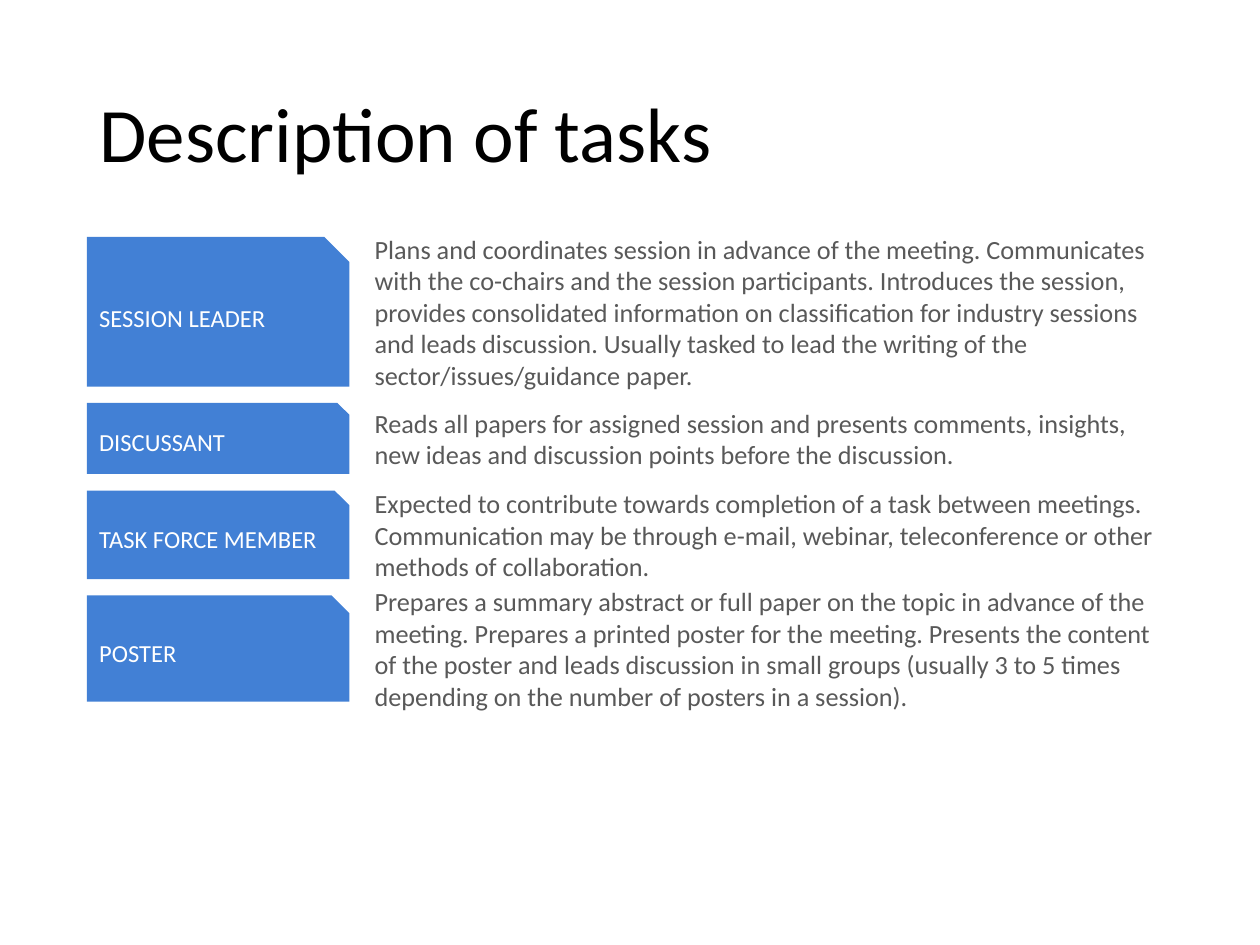
from dataclasses import dataclass

import pptx
import pptx.dml.color
import pptx.enum.shapes
import pptx.enum.text
import pptx.util

Pt = pptx.util.Pt
COLORS = {"title": "000000", "tag": "4280D5", "tag_text": "FFFFFF", "body": "595959"}
FONT = "Calibri"
LEFT, TOP, GAP = 49.6, 135.4, 9.4
TAG_WIDTH = 150
DETAIL_LEFT, DETAIL_WIDTH = 207, 465


@dataclass
class Task:
    role: str
    detail: str
    height: float


TASKS = [
    Task("SESSION LEADER",
         "Plans and coordinates session in advance of the meeting. Communicates with the "
         "co-chairs and the session participants. Introduces the session, provides "
         "consolidated information on classification for industry sessions and leads "
         "discussion. Usually tasked to lead the writing of the sector/issues/guidance paper.",
         85.5),
    Task("DISCUSSANT",
         "Reads all papers for assigned session and presents comments, insights, new ideas "
         "and discussion points before the discussion.",
         40.6),
    Task("TASK FORCE MEMBER",
         "Expected to contribute towards completion of a task between meetings. "
         "Communication may be through e-mail, webinar, teleconference or other methods of "
         "collaboration.",
         50.6),
    Task("POSTER",
         "Prepares a summary abstract or full paper on the topic in advance of the meeting. "
         "Prepares a printed poster for the meeting. Presents the content of the poster and "
         "leads discussion in small groups (usually 3 to 5 times depending on the number of "
         "posters in a session).",
         60.6),
]


def rgb(role: str) -> pptx.dml.color.RGBColor:
    return pptx.dml.color.RGBColor.from_string(COLORS[role])


def write(frame, text: str, size: float, color: str) -> None:
    """Fill a text frame with one left-aligned, vertically centred paragraph."""
    frame.text = text
    frame.word_wrap = True
    frame.auto_size = pptx.enum.text.MSO_AUTO_SIZE.NONE
    frame.vertical_anchor = pptx.enum.text.MSO_ANCHOR.MIDDLE
    paragraph = frame.paragraphs[0]
    paragraph.alignment = pptx.enum.text.PP_ALIGN.LEFT
    for run in paragraph.runs:
        run.font.name = FONT
        run.font.size = Pt(size)
        run.font.color.rgb = rgb(color)


def draw_task(slide, task: Task, top: float) -> None:
    tag = slide.shapes.add_shape(
        pptx.enum.shapes.MSO_SHAPE.SNIP_1_RECTANGLE,
        Pt(LEFT), Pt(top), Pt(TAG_WIDTH), Pt(task.height))
    tag.shadow.inherit = False
    tag.fill.solid()
    tag.fill.fore_color.rgb = rgb("tag")
    tag.line.fill.background()
    write(tag.text_frame, task.role, 14, "tag_text")

    detail = slide.shapes.add_textbox(
        Pt(DETAIL_LEFT), Pt(top), Pt(DETAIL_WIDTH), Pt(task.height))
    write(detail.text_frame, task.detail, 15, "body")


def main() -> None:
    deck = pptx.Presentation()
    deck.slide_width, deck.slide_height = Pt(720), Pt(540)
    slide = deck.slides.add_slide(deck.slide_layouts[5])

    title = slide.shapes.title
    title.left, title.top, title.width, title.height = Pt(LEFT), Pt(26.6), Pt(621), Pt(104.4)
    write(title.text_frame, "Description of tasks", 44, "title")
    title.text_frame.paragraphs[0].line_spacing = 0.9

    top = TOP
    for task in TASKS:
        draw_task(slide, task, top)
        top += task.height + GAP

    deck.save("out.pptx")


if __name__ == "__main__":
    main()
